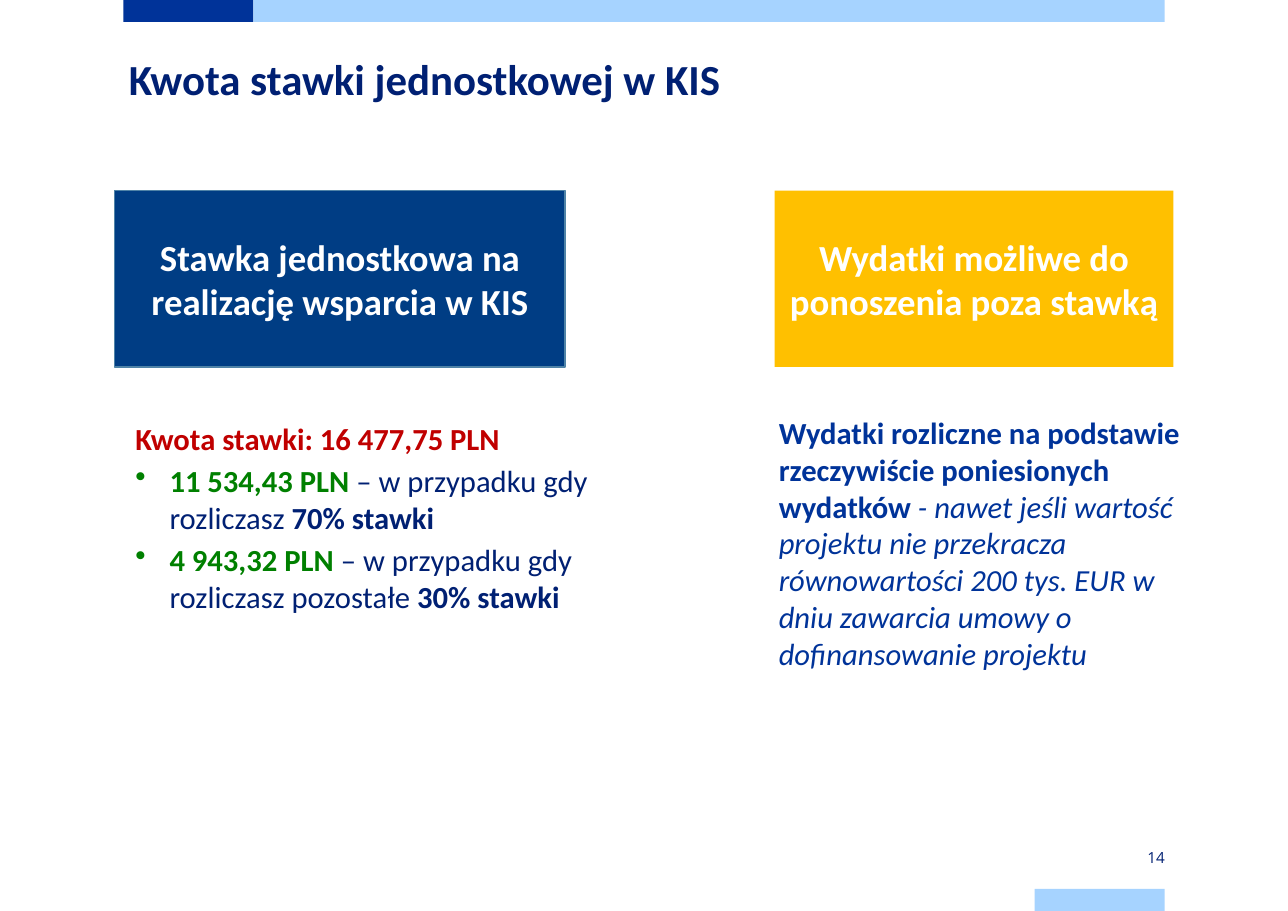
"""Builds the slide on the unit rate in KIS."""
import dataclasses
import typing

import lxml.etree
import pptx
import pptx.dml.color
import pptx.enum.shapes
import pptx.enum.text
import pptx.oxml.ns
import pptx.util

ANCHOR = pptx.enum.text.MSO_ANCHOR
ALIGN = pptx.enum.text.PP_ALIGN
FIT = pptx.enum.text.MSO_AUTO_SIZE
RECT = pptx.enum.shapes.MSO_SHAPE.RECTANGLE

WIDE = pptx.util.Inches(11.69)
HIGH = pptx.util.Inches(8.27)
INDENT = pptx.util.Inches(0.31)
INK, BLUE, SKY, NAVY = "002073", "003399", "A6D3FF", "003D84"
GOLD, EDGE, RED, GREEN, WHITE = "FFC000", "4F83A7", "C00000", "008000", "FFFFFF"

GROW = {"word_wrap": True, "auto_size": FIT.SHAPE_TO_FIT_TEXT}
LABEL = {"word_wrap": True, "vertical_anchor": ANCHOR.MIDDLE}
HEAD = {"word_wrap": False, "auto_size": FIT.SHAPE_TO_FIT_TEXT,
        "vertical_anchor": ANCHOR.TOP}
PAGE = {**LABEL, "margin_left": 0, "margin_right": 0,
        "margin_top": pptx.util.Inches(0.08), "margin_bottom": pptx.util.Inches(0.08)}


class Run(typing.NamedTuple):
    """A stretch of text in one format."""
    text: str
    tint: str
    size: float = 20
    bold: bool = True
    slant: bool = False
    face: str = "Calibri"


@dataclasses.dataclass
class Para:
    """A paragraph and its layout."""
    runs: list[Run]
    align: ALIGN = ALIGN.LEFT
    after: float = 0
    bullet: bool = False


@dataclasses.dataclass
class Box:
    """A block placed by percent of the slide: left, top, width, height."""
    place: tuple[float, float, float, float]
    paras: list[Para] = dataclasses.field(default_factory=list)
    frame: dict[str, typing.Any] = dataclasses.field(default_factory=dict)
    fill: str = ""
    line: str = ""


def label(text: str) -> list[Para]:
    """Return the centred text of a coloured block."""
    return [Para([Run(text, WHITE, 24)], ALIGN.CENTER)]


def rate(sum_: str, link: str, share: str) -> Para:
    """Return a bullet with an amount and its share of the rate."""
    return Para([Run(sum_, GREEN), Run(link, INK, bold=False), Run(share, INK)],
                after=3.6, bullet=True)


TITLE = Box((9.15, 5.2, 48.16, 6.89),
            [Para([Run("Kwota stawki jednostkowej w KIS", INK, 28)])], HEAD)
BOXES = [
    Box((9.58, 0, 10.1, 2.42), fill=BLUE),
    Box((19.68, 0, 70.74, 2.42), fill=SKY),
    Box((80.33, 97.58, 10.1, 2.42), fill=SKY),
    Box((80.33, 92.87, 10.1, 2.42),
        [Para([Run("14", INK, 10, False, face="Open Sans")], ALIGN.RIGHT)], PAGE),
    Box((9.67, 45.47, 40.29, 22.73), [
        Para([Run("Kwota stawki: 16 477,75 PLN", RED)], after=3.6),
        rate("11 534,43 PLN", " – w przypadku gdy rozliczasz ", "70% stawki"),
        rate("4 943,32 PLN ", "– w przypadku gdy rozliczasz pozostałe ", "30% stawki"),
    ], GROW),
    Box((8.9, 20.92, 34.99, 19.35),
        label("Stawka jednostkowa na realizację wsparcia w KIS"), LABEL, NAVY, EDGE),
    Box((60.14, 20.92, 30.97, 19.35),
        label("Wydatki możliwe do ponoszenia poza stawką"), LABEL, GOLD),
    Box((59.62, 44.86, 33.11, 29.75), [Para([
        Run("Wydatki rozliczne na podstawie rzeczywiście poniesionych wydatków ", BLUE),
        Run("- nawet jeśli wartość projektu nie przekracza równowartości 200 tys. EUR "
            "w dniu zawarcia umowy o dofinansowanie projektu", BLUE, bold=False, slant=True),
    ])], GROW),
]


def shade(code: str) -> pptx.dml.color.RGBColor:
    """Turn a hex string into a colour."""
    return pptx.dml.color.RGBColor.from_string(code)


def assign(item: typing.Any, style: dict[str, typing.Any]) -> None:
    """Set each attribute named in the style."""
    for key, value in style.items():
        setattr(item, key, value)


def spot(place: tuple[float, float, float, float]) -> list[int]:
    """Turn percents of the slide into lengths."""
    return [round(part * side / 100) for part, side in zip(place, (WIDE, HIGH) * 2)]


def write(shape: typing.Any, box: Box) -> None:
    """Fill a shape with the text of a box."""
    frame = shape.text_frame
    assign(frame, box.frame)
    for rank, para in enumerate(box.paras):
        row = frame.add_paragraph() if rank else frame.paragraphs[0]
        if para.bullet:
            props = row._p.get_or_add_pPr()
            props.set("marL", str(INDENT))
            props.set("indent", str(-INDENT))
            mark = lxml.etree.SubElement(props, pptx.oxml.ns.qn("a:buChar"))
            mark.set("char", "•")
        assign(row, {"alignment": para.align, "space_before": pptx.util.Pt(0),
                     "space_after": pptx.util.Pt(para.after)})
        for run in para.runs:
            piece = row.add_run()
            piece.text = run.text
            assign(piece.font, {"name": run.face, "size": pptx.util.Pt(run.size),
                                "bold": run.bold, "italic": run.slant})
            piece.font.color.rgb = shade(run.tint)


def draw(slide: typing.Any, box: Box) -> None:
    """Draw a box as a filled block or as plain text."""
    area = spot(box.place)
    if box.fill:
        shape = slide.shapes.add_shape(RECT, *area)
        shape.shadow.inherit = False
        shape.fill.solid()
        shape.fill.fore_color.rgb = shade(box.fill)
        if box.line:
            shape.line.color.rgb = shade(box.line)
            shape.line.width = pptx.util.Pt(1)
        else:
            shape.line.fill.background()
    else:
        shape = slide.shapes.add_textbox(*area)
    write(shape, box)


def main() -> None:
    """Build and save the slide."""
    deck = pptx.Presentation()
    assign(deck, {"slide_width": WIDE, "slide_height": HIGH})
    slide = deck.slides.add_slide(deck.slide_layouts.get_by_name("Title Only"))
    title = slide.shapes.title
    assign(title, dict(zip(("left", "top", "width", "height"), spot(TITLE.place))))
    write(title, TITLE)
    for box in BOXES:
        draw(slide, box)
    deck.save("out.pptx")


if __name__ == "__main__":
    main()
